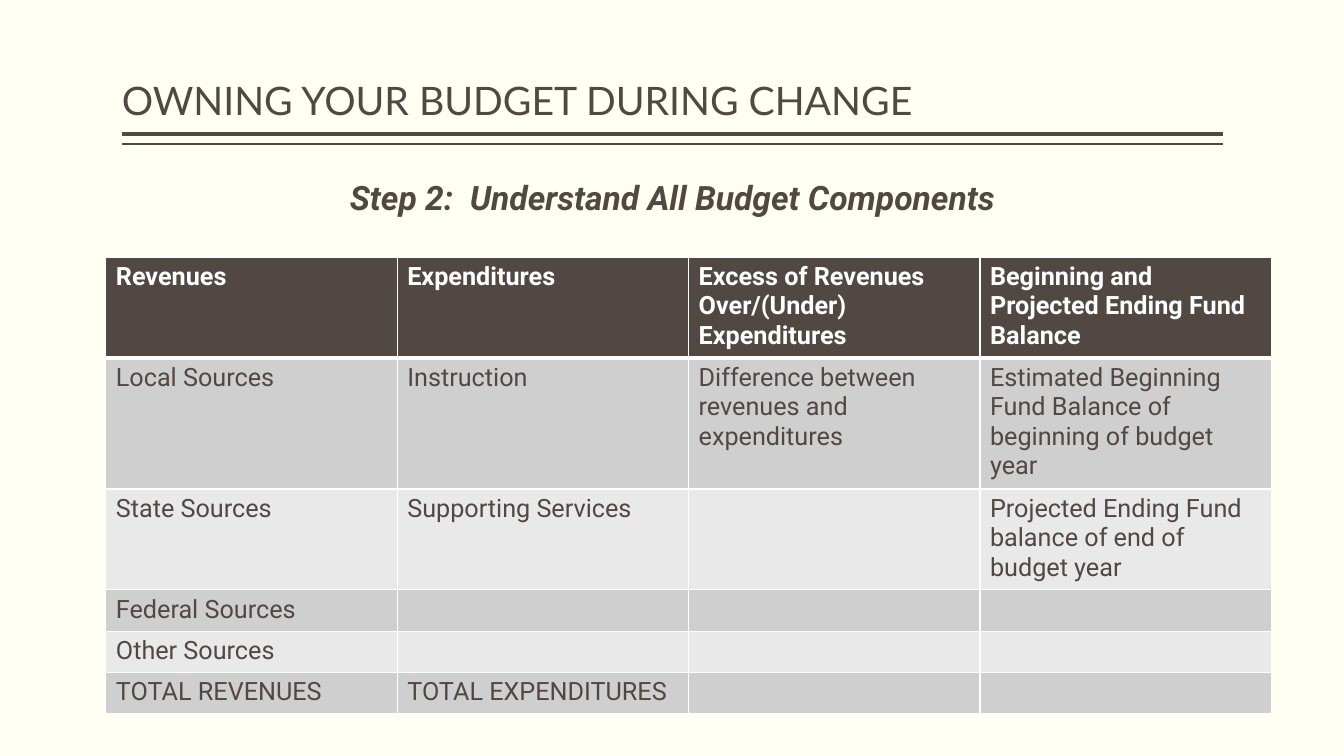
"""Build the budget components slide."""
import lxml.etree
import pptx
import pptx.dml.color
import pptx.enum.shapes
import pptx.enum.text
import pptx.oxml.ns
import pptx.util

Inches = pptx.util.Inches
ANCHOR = pptx.enum.text.MSO_ANCHOR
ALIGN = pptx.enum.text.PP_ALIGN

COLORS = {"paper": "FFFFF3", "brown": "514843", "white": "FFFFFF",
          "dark_band": "D0CFCF", "light_band": "E9E9E9"}
LEFT, WIDTH = 1.21, 10.92
HEADINGS = [
    {"text": "OWNING YOUR BUDGET DURING CHANGE", "top": 0.08, "height": 1.2,
     "anchor": ANCHOR.BOTTOM, "align": ALIGN.LEFT,
     "font": {"name": "Lato", "size": pptx.util.Pt(28)}},
    {"text": "Step 2:  Understand All Budget Components", "top": 1.75, "height": 0.6,
     "anchor": ANCHOR.TOP, "align": ALIGN.CENTER,
     "font": {"name": "Roboto", "size": pptx.util.Pt(24), "bold": True, "italic": True}},
]
RULES = [(1.33, 3), (1.43, 1)]
TABLE_LEFT, TABLE_TOP, COLUMN_WIDTH = 1.05, 2.55, 2.89
ROW_HEIGHTS = [0.97, 1.28, 0.98, 0.41, 0.41, 0.41]
ROWS = [
    ["Revenues", "Expenditures", "Excess of Revenues Over/(Under) Expenditures",
     "Beginning and Projected Ending Fund Balance"],
    ["Local Sources", "Instruction", "Difference between revenues and expenditures",
     "Estimated Beginning Fund Balance of beginning of budget year"],
    ["State Sources", "Supporting Services", "",
     "Projected Ending Fund balance of end of budget year"],
    ["Federal Sources", "", "", ""],
    ["Other Sources", "", "", ""],
    ["TOTAL REVENUES", "TOTAL EXPENDITURES", "", ""],
]


def rgb(name):
    """Return a named colour."""
    return pptx.dml.color.RGBColor.from_string(COLORS[name])


def set_values(target, values):
    """Set attributes from a dict."""
    for name, value in values.items():
        setattr(target, name, value)


def write(paragraph, text, font, color):
    """Add one formatted run."""
    run = paragraph.add_run()
    run.text = text
    set_values(run.font, font)
    run.font.color.rgb = rgb(color)


def add_heading(slide, heading):
    """Add a line of heading text."""
    box = slide.shapes.add_textbox(Inches(LEFT), Inches(heading["top"]),
                                   Inches(WIDTH), Inches(heading["height"]))
    frame = box.text_frame
    set_values(frame, {"word_wrap": True, "margin_left": 0, "margin_right": 0,
                       "vertical_anchor": heading["anchor"]})
    paragraph = frame.paragraphs[0]
    set_values(paragraph, {"alignment": heading["align"], "line_spacing": 0.9})
    write(paragraph, heading["text"], heading["font"], "brown")


def add_rule(slide, top, weight):
    """Add a horizontal rule."""
    rule = slide.shapes.add_connector(
        pptx.enum.shapes.MSO_CONNECTOR.STRAIGHT,
        Inches(LEFT + WIDTH), Inches(top), Inches(LEFT), Inches(top))
    rule.line.color.rgb = rgb("brown")
    rule.line.width = pptx.util.Pt(weight)
    lxml.etree.SubElement(rule._element.spPr, pptx.oxml.ns.qn("a:effectLst"))


def add_borders(cell, weights):
    """Draw white cell borders."""
    properties = cell._tc.get_or_add_tcPr()
    for position, (side, weight) in enumerate(weights.items()):
        line = lxml.etree.Element(pptx.oxml.ns.qn("a:" + side),
                                  w=str(pptx.util.Pt(weight)))
        fill = lxml.etree.SubElement(line, pptx.oxml.ns.qn("a:solidFill"))
        lxml.etree.SubElement(fill, pptx.oxml.ns.qn("a:srgbClr"), val=COLORS["white"])
        properties.insert(position, line)


def add_budget_table(slide):
    """Add the table of budget components."""
    columns = len(ROWS[0])
    table = slide.shapes.add_table(
        len(ROWS), columns, Inches(TABLE_LEFT), Inches(TABLE_TOP),
        Inches(COLUMN_WIDTH * columns), Inches(sum(ROW_HEIGHTS))).table
    for column in table.columns:
        column.width = Inches(COLUMN_WIDTH)
    for row_index, texts in enumerate(ROWS):
        table.rows[row_index].height = Inches(ROW_HEIGHTS[row_index])
        header = row_index == 0
        band = "brown" if header else ("light_band", "dark_band")[row_index % 2]
        font = {"name": "Roboto", "size": pptx.util.Pt(18), "bold": header}
        weights = {"lnL": 1, "lnR": 1, "lnT": 3 if row_index == 1 else 1,
                   "lnB": 3 if header else 1}
        for column_index, text in enumerate(texts):
            cell = table.cell(row_index, column_index)
            cell.fill.solid()
            cell.fill.fore_color.rgb = rgb(band)
            add_borders(cell, weights)
            if text:
                write(cell.text_frame.paragraphs[0], text, font,
                      "white" if header else "brown")


def main():
    """Build and save the presentation."""
    presentation = pptx.Presentation()
    set_values(presentation, {"slide_width": Inches(13.33), "slide_height": Inches(7.5)})
    slide = presentation.slides.add_slide(presentation.slide_layouts[6])
    slide.background.fill.solid()
    slide.background.fill.fore_color.rgb = rgb("paper")
    for top, weight in RULES:
        add_rule(slide, top, weight)
    for heading in HEADINGS:
        add_heading(slide, heading)
    add_budget_table(slide)
    presentation.save("out.pptx")


if __name__ == "__main__":
    main()
